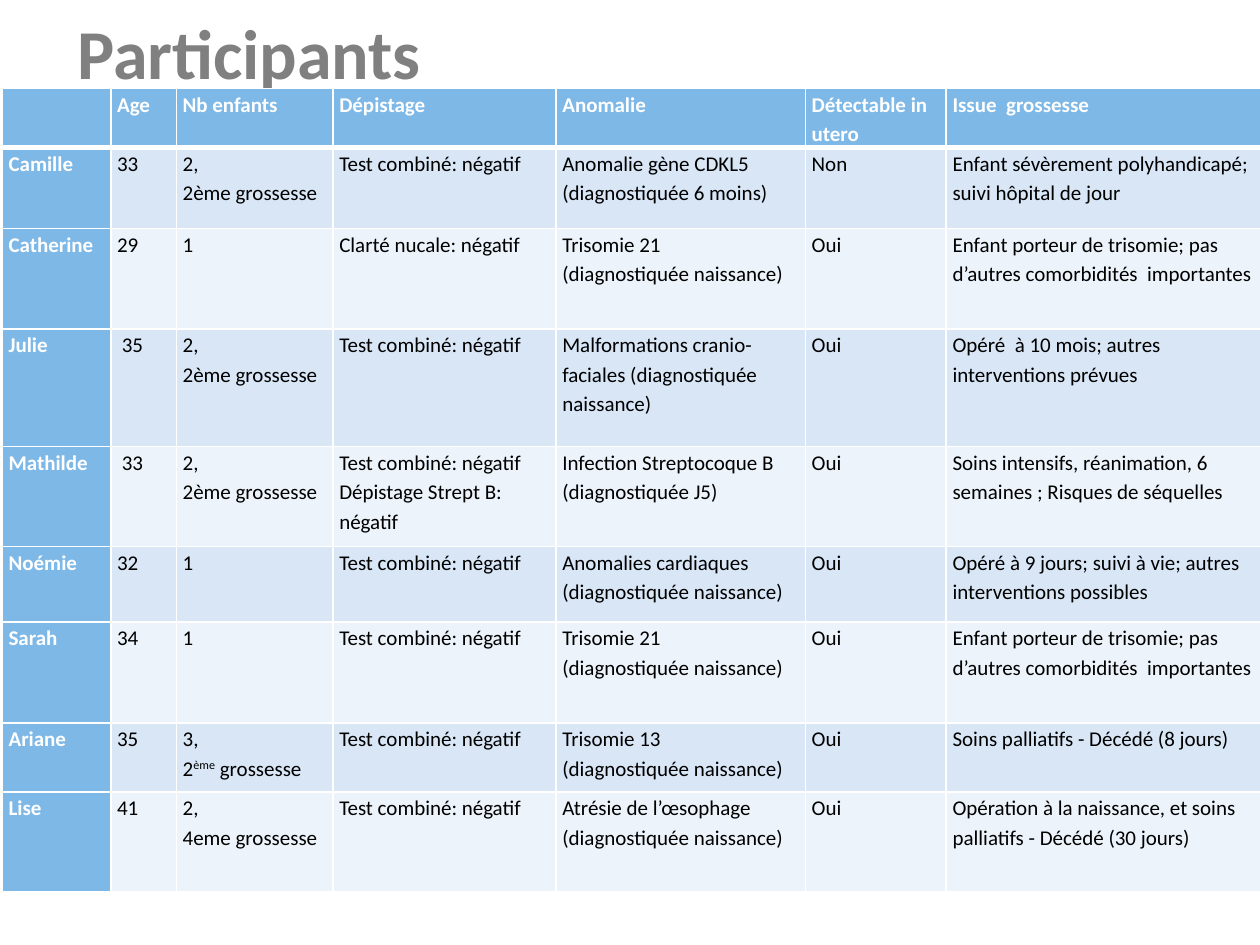
import pptx
import pptx.dml.color
import pptx.enum.text
import pptx.oxml
import pptx.oxml.ns
import pptx.util

Pt = pptx.util.Pt

WHITE = "FFFFFF"
HEADER_BLUE = "7EB8E7"
BAND_FILLS = ("D8E6F6", "ECF3FA")
COLUMN_WIDTHS = (62, 37.5, 89.5, 127.5, 142.5, 80.5, 179.5)
ROW_HEIGHTS = (32.5, 46.2, 57.6, 67, 57.2, 43.2, 57.6, 39.5, 57.2)

SECOND = "2,\n2ème grossesse"
COMBINED = "Test combiné: négatif"
AT_BIRTH = "\n(diagnostiquée naissance)"
TRISOMY_OUTCOME = "Enfant porteur de trisomie; pas d’autres comorbidités  importantes"
ROWS = (
    ("", "Age", "Nb enfants", "Dépistage", "Anomalie", "Détectable in utero", "Issue  grossesse"),
    ("Camille", "33", SECOND, COMBINED, "Anomalie gène CDKL5\n(diagnostiquée 6 moins)", "Non",
     "Enfant sévèrement polyhandicapé; suivi hôpital de jour"),
    ("Catherine", "29", "1", "Clarté nucale: négatif", "Trisomie 21" + AT_BIRTH, "Oui", TRISOMY_OUTCOME),
    ("Julie", " 35", SECOND, COMBINED, "Malformations cranio-faciales (diagnostiquée naissance)", "Oui",
     "Opéré  à 10 mois; autres interventions prévues"),
    ("Mathilde", " 33", SECOND, COMBINED + "\nDépistage Strept B: négatif",
     "Infection Streptocoque B\n(diagnostiquée J5)", "Oui",
     "Soins intensifs, réanimation, 6 semaines ; Risques de séquelles"),
    ("Noémie", "32", "1", COMBINED, "Anomalies cardiaques" + AT_BIRTH, "Oui",
     "Opéré à 9 jours; suivi à vie; autres interventions possibles"),
    ("Sarah", "34", "1", COMBINED, "Trisomie 21" + AT_BIRTH, "Oui", TRISOMY_OUTCOME),
    ("Ariane", "35", "3,\n2^ème^ grossesse", COMBINED, "Trisomie 13" + AT_BIRTH, "Oui",
     "Soins palliatifs - Décédé (8 jours)"),
    ("Lise", "41", "2,\n4eme grossesse", COMBINED, "Atrésie de l’œsophage" + AT_BIRTH, "Oui",
     "Opération à la naissance, et soins palliatifs - Décédé (30 jours)"),
)


def color(value):
    return pptx.dml.color.RGBColor.from_string(value)


def line_element(tag, width, value):
    return pptx.oxml.parse_xml(
        f'<a:{tag} {pptx.oxml.ns.nsdecls("a")} w="{Pt(width)}"><a:solidFill>'
        f'<a:srgbClr val="{value}"/></a:solidFill></a:{tag}>')


class SlideBuilder:
    font_name = "Calibri"

    def __init__(self, presentation):
        self.slide = presentation.slides.add_slide(presentation.slide_layouts[5])

    def run(self, paragraph, text, size, value, bold):
        run = paragraph.add_run()
        run.text = text
        run.font.name = self.font_name
        run.font.size = Pt(size)
        run.font.bold = bold
        run.font.color.rgb = color(value)
        return run

    def title(self, text, left, top, width, height):
        shape = self.slide.shapes.title
        shape.left, shape.top, shape.width, shape.height = map(Pt, (left, top, width, height))
        frame = shape.text_frame
        frame.auto_size = pptx.enum.text.MSO_AUTO_SIZE.NONE
        frame.vertical_anchor = pptx.enum.text.MSO_ANCHOR.MIDDLE
        paragraph = frame.paragraphs[0]
        paragraph.alignment = pptx.enum.text.PP_ALIGN.LEFT
        run = self.run(paragraph, text, 40, "808080", True)
        run.font._element.insert(0, line_element("ln", 1.1, WHITE))

    def cell(self, cell, text, fill, value, bold, top_border, bottom_border):
        cell.margin_left = cell.margin_right = Pt(3.6)
        cell.margin_top = cell.margin_bottom = 0
        frame = cell.text_frame
        for index, line in enumerate(text.split("\n") if text else ()):
            paragraph = frame.add_paragraph() if index else frame.paragraphs[0]
            paragraph.line_spacing = 1.15
            for part, words in enumerate(line.split("^")):
                run = self.run(paragraph, words, 12, value, bold)
                if part % 2:
                    run.font._element.set("baseline", "30000")
        cell.fill.solid()
        cell.fill.fore_color.rgb = color(fill)
        properties = cell._tc.get_or_add_tcPr()
        borders = (("lnL", 1), ("lnR", 1), ("lnT", top_border), ("lnB", bottom_border))
        for index, (tag, width) in enumerate(borders):
            properties.insert(index, line_element(tag, width, WHITE))

    def table(self, rows, left, top, widths, heights):
        frame = self.slide.shapes.add_table(
            len(rows), len(widths), Pt(left), Pt(top), Pt(sum(widths)), Pt(sum(heights)))
        table = frame.table
        table.horz_banding = False
        for column, width in zip(table.columns, widths):
            column.width = Pt(width)
        for row, height in zip(table.rows, heights):
            row.height = Pt(height)
        for row_index, texts in enumerate(rows):
            for column_index, text in enumerate(texts):
                heading = row_index == 0 or column_index == 0
                self.cell(
                    table.cell(row_index, column_index), text,
                    HEADER_BLUE if heading else BAND_FILLS[(row_index - 1) % 2],
                    WHITE if heading else "000000", heading,
                    3 if row_index == 1 else 1, 3 if row_index == 0 else 1)


def main():
    presentation = pptx.Presentation()
    presentation.slide_width = Pt(720)
    presentation.slide_height = Pt(540)
    builder = SlideBuilder(presentation)
    builder.title("Participants", 37, 9.5, 648, 39.5)
    builder.table(ROWS, 1.3, 50.7, COLUMN_WIDTHS, ROW_HEIGHTS)
    presentation.save("out.pptx")


if __name__ == "__main__":
    main()
